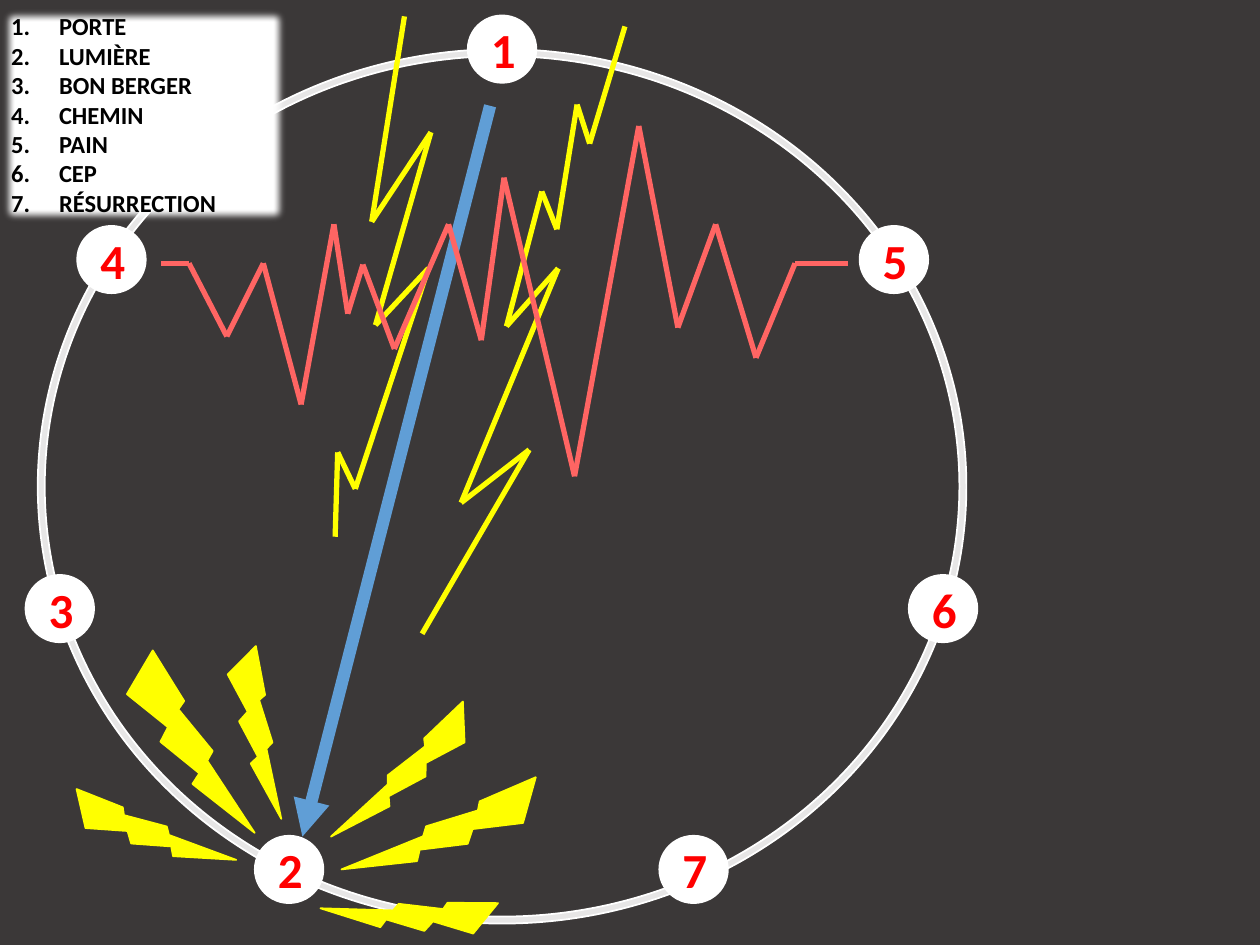
import itertools

import pptx
import pptx.dml.color
import pptx.enum.dml
import pptx.enum.shapes
import pptx.enum.text
import pptx.oxml.ns
import pptx.oxml.xmlchemy
import pptx.util
from lxml import etree
from pptx.util import Inches

SHAPES = pptx.enum.shapes.MSO_SHAPE
YELLOW = "FFFF00"
WHITE = "FFFFFF"

NAMES = ["PORTE", "LUMIÈRE", "BON BERGER", "CHEMIN", "PAIN", "CEP", "RÉSURRECTION"]
STATIONS = {
    "1": (3.72, 0.13), "2": (2.03, 6.64), "7": (5.24, 6.64), "3": (0.21, 4.57),
    "4": (0.62, 1.8), "5": (6.83, 1.8), "6": (7.22, 4.57),
}
LEFT_FLASH = [
    (3.21, 0.13), (2.95, 1.76), (3.42, 1.05), (2.98, 2.58),
    (3.4, 2.13), (2.82, 3.88), (2.68, 3.59), (2.66, 4.26),
]
RIGHT_FLASH = [
    (4.96, 0.21), (4.68, 1.14), (4.58, 0.83), (4.42, 1.82), (4.3, 1.52),
    (4.02, 2.59), (4.43, 2.13), (3.66, 3.99), (4.2, 3.57), (3.35, 5.03),
]
HEARTBEAT = [
    (1.28, 2.09), (1.5, 2.09), (1.8, 2.67), (2.09, 2.09), (2.39, 3.21),
    (2.65, 1.78), (2.76, 2.49), (2.88, 2.1), (3.13, 2.77), (3.56, 1.78),
    (3.82, 2.7), (4, 1.41), (4.56, 3.78), (5.07, 1), (5.38, 2.6),
    (5.68, 1.78), (6, 2.84), (6.31, 2.09), (6.73, 2.09),
]
BOLTS = [
    (1.12, 5.12, 0.72, 1.6, 346.1, False),
    (3.26, 5.79, 0.58, 1.67, 52.7, True),
    (1.77, 5.13, 0.52, 1.35, 4.8, False),
    (0.92, 5.95, 0.52, 1.35, 307.1, False),
    (2.99, 5.42, 0.48, 1.47, 33.1, True),
    (3.03, 6.59, 0.48, 1.38, 76.4, True),
]


def color(value):
    return pptx.dml.color.RGBColor.from_string(value)


def add_element(parent, tag, **attributes):
    return etree.SubElement(parent, pptx.oxml.ns.qn(tag), attributes)


def add_shape(slide, kind, left, top, width, height, fill, line=None, line_width=1):
    shape = slide.shapes.add_shape(
        kind, Inches(left), Inches(top), Inches(width), Inches(height))
    shape.shadow.inherit = False
    shape.fill.solid()
    shape.fill.fore_color.rgb = color(fill)
    if line:
        shape.line.color.rgb = color(line)
        shape.line.width = pptx.util.Pt(line_width)
    else:
        shape.line.fill.background()
    return shape


def add_run(paragraph, text, size, text_color):
    run = paragraph.add_run()
    run.text = text
    run.font.name = "Calibri"
    run.font.size = pptx.util.Pt(size)
    run.font.bold = True
    run.font.color.rgb = color(text_color)


def add_station(slide, number, left, top):
    circle = add_shape(slide, SHAPES.OVAL, left, top, 0.53, 0.52, WHITE, WHITE, 2)
    circle.text_frame.vertical_anchor = pptx.enum.text.MSO_ANCHOR.MIDDLE
    paragraph = circle.text_frame.paragraphs[0]
    paragraph.alignment = pptx.enum.text.PP_ALIGN.CENTER
    add_run(paragraph, number, 28, "FF0000")


def add_line(slide, start, end, line_color, width):
    connector = slide.shapes.add_connector(
        pptx.enum.shapes.MSO_CONNECTOR.STRAIGHT, *map(Inches, start + end))
    connector.line.color.rgb = color(line_color)
    connector.line.width = pptx.util.Pt(width)
    add_element(connector._element.spPr, "a:effectLst")
    return connector


def add_zigzag(slide, points, line_color):
    for start, end in itertools.pairwise(points):
        add_line(slide, start, end, line_color, 3)


def add_arrow(slide, start, end, line_color, width):
    connector = add_line(slide, start, end, line_color, width)
    add_element(connector.line._get_or_add_ln(), "a:tailEnd", type="triangle")


def add_legend(slide, names):
    legend = add_shape(slide, SHAPES.RECTANGLE, -0.01, 0.04, 2.31, 1.75, WHITE)
    effects = legend._element.spPr.find(pptx.oxml.ns.qn("a:effectLst"))
    add_element(effects, "a:softEdge", rad="63500")
    frame = legend.text_frame
    frame.word_wrap = True
    frame.vertical_anchor = pptx.enum.text.MSO_ANCHOR.TOP
    frame.auto_size = pptx.enum.text.MSO_AUTO_SIZE.SHAPE_TO_FIT_TEXT
    indent = Inches(0.38)
    for index, name in enumerate(names):
        paragraph = frame.add_paragraph() if index else frame.paragraphs[0]
        paragraph.alignment = pptx.enum.text.PP_ALIGN.LEFT
        properties = paragraph._p.get_or_add_pPr()
        properties.set("marL", str(indent))
        properties.set("indent", str(-indent))
        add_element(properties, "a:buFont", typeface="+mj-lt")
        add_element(properties, "a:buAutoNum", type="arabicPeriod")
        add_run(paragraph, name, 14, "000000")


def add_bolt(slide, left, top, width, height, rotation, flipped):
    bolt = add_shape(
        slide, SHAPES.LIGHTNING_BOLT, left, top, width, height, YELLOW, YELLOW)
    bolt.rotation = rotation
    if flipped:
        bolt._element.spPr.find(pptx.oxml.ns.qn("a:xfrm")).set("flipH", "1")


def main():
    presentation = pptx.Presentation()
    presentation.slide_width = Inches(10)
    presentation.slide_height = Inches(7.5)
    slide = presentation.slides.add_slide(presentation.slide_layouts[6])
    slide.background.fill.solid()
    slide.background.fill.fore_color.rgb = color("3B3838")

    ring = add_shape(slide, SHAPES.DONUT, 0.3, 0.39, 7.37, 6.94, "E7E6E6", WHITE)
    ring.adjustments[0] = 0.008
    for number, (left, top) in STATIONS.items():
        add_station(slide, number, left, top)

    add_zigzag(slide, LEFT_FLASH, YELLOW)
    add_zigzag(slide, RIGHT_FLASH, YELLOW)
    add_arrow(slide, (3.89, 0.84), (2.4, 6.64), "609ED6", 7)
    add_zigzag(slide, HEARTBEAT, "FF6563")
    add_legend(slide, NAMES)
    for bolt in BOLTS:
        add_bolt(slide, *bolt)

    presentation.save("out.pptx")


if __name__ == "__main__":
    main()
